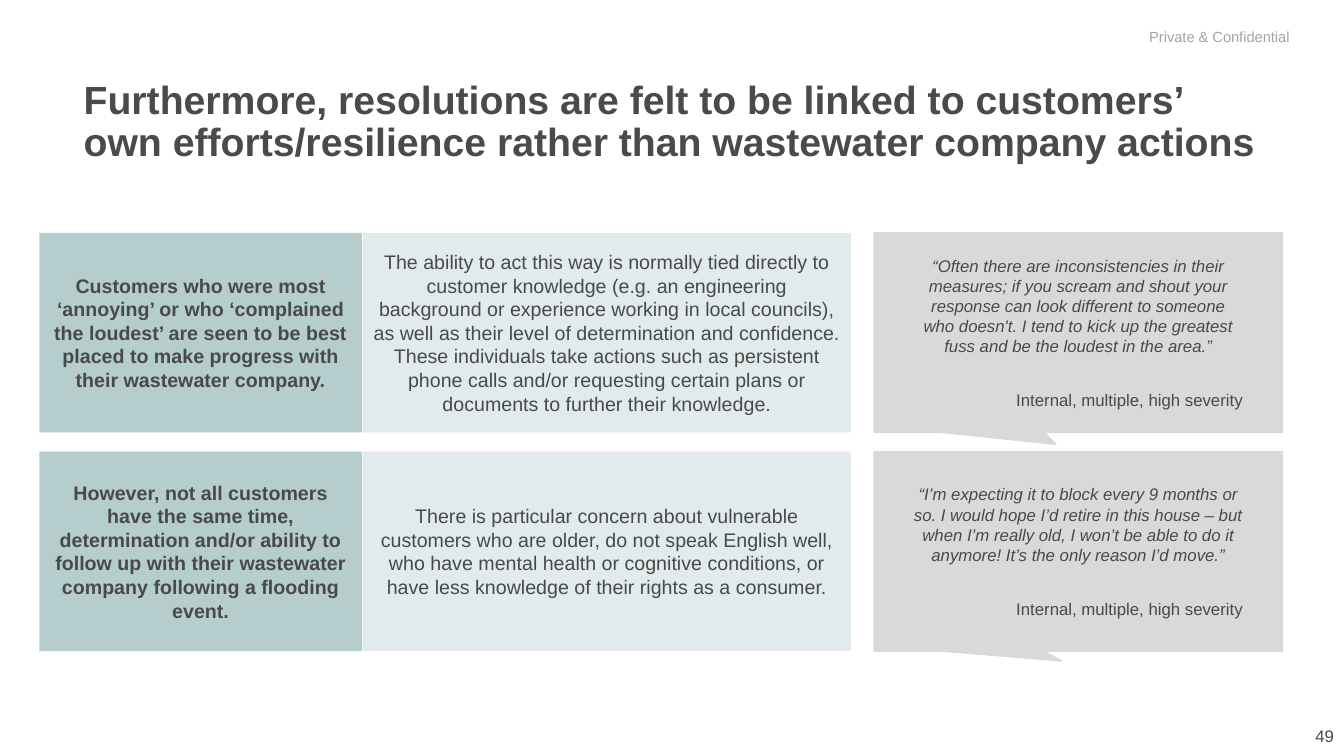
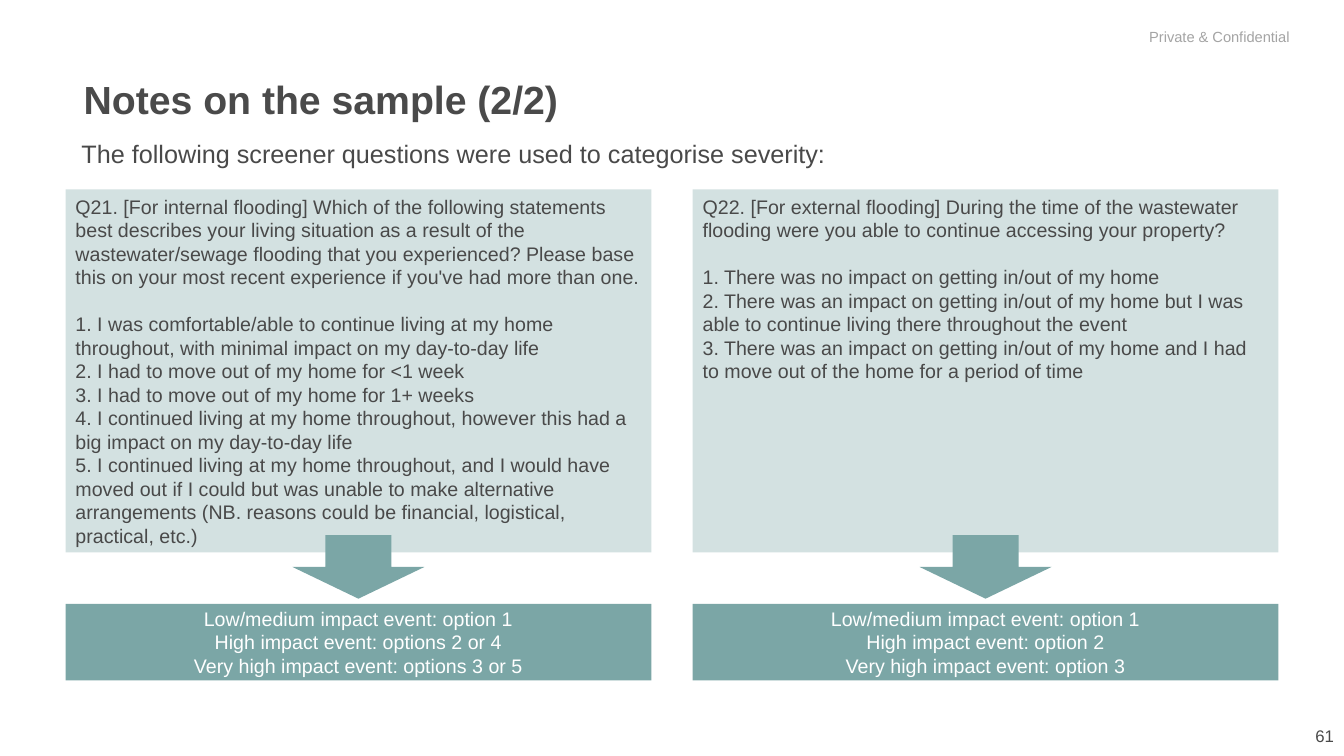
import pptx
import pptx.util
import pptx.dml.color
import pptx.enum.shapes
import pptx.enum.text

Inches = pptx.util.Inches
Pt = pptx.util.Pt
RGB = pptx.dml.color.RGBColor
KIND = pptx.enum.shapes.MSO_SHAPE
ALIGN = pptx.enum.text.PP_ALIGN
ANCHOR = pptx.enum.text.MSO_ANCHOR

INK = RGB(0x49, 0x49, 0x49)
HEAD = RGB(0x4A, 0x4A, 0x4A)
MUTED = RGB(0xA4, 0xA4, 0xA4)
WHITE = RGB(0xFF, 0xFF, 0xFF)
GREY = RGB(0xD9, 0xD9, 0xD9)
TEAL = RGB(0x7B, 0xA6, 0xA6)
SAGE = RGB(0xB5, 0xCD, 0xCD)
MIST = RGB(0xD3, 0xE1, 0xE1)
PALE = RGB(0xE1, 0xEB, 0xEB)

WIDE, HIGH = 13.33, 7.5

BODY = {"size": Pt(14), "name": "Arial", "color": INK}
LABEL = BODY | {"bold": True}
LIGHT = BODY | {"color": WHITE}
TITLE = {"size": Pt(28), "name": "Arial", "color": HEAD, "bold": True}
INTRO = BODY | {"size": Pt(18)}
SMALL = BODY | {"size": Pt(10.5), "color": MUTED}
PAGE = BODY | {"size": Pt(12), "color": HEAD}
NAME = BODY | {"size": Pt(12)}
QUOTE = NAME | {"italic": True}

# Themes grid: label, detail and quote columns as (left, width)
COLS = [(0.39, 3.2), (3.6, 4.84), (8.67, 4.05)]
ROW_TOP, ROW_HIGH, ROW_GAP = 2.31, 1.98, 0.19

# Screener grid: two equal columns
ASK_LEFT, ASK_WIDE, ASK_GAP = 0.65, 5.81, 0.41

THEMES = [
    ("Customers who were most ‘annoying’ or who ‘complained the loudest’ are "
     "seen to be best placed to make progress with their wastewater company.",
     "The ability to act this way is normally tied directly to customer "
     "knowledge (e.g. an engineering background or experience working in local "
     "councils), as well as their level of determination and confidence. These "
     "individuals take actions such as persistent phone calls and/or requesting "
     "certain plans or documents to further their knowledge.",
     "“Often there are inconsistencies in their measures; if you scream and "
     "shout your response can look different to someone who doesn't. I tend to "
     "kick up the greatest fuss and be the loudest in the area.”",
     (-0.055, 0.56)),
    ("However, not all customers have the same time, determination and/or "
     "ability to follow up with their wastewater company following a flooding "
     "event.",
     "There is particular concern about vulnerable customers who are older, do "
     "not speak English well, who have mental health or cognitive conditions, "
     "or have less knowledge of their rights as a consumer.",
     "“I’m expecting it to block every 9 months or so. I would hope I’d retire "
     "in this house – but when I’m really old, I won’t be able to do it "
     "anymore! It’s the only reason I’d move.”",
     (-0.041, 0.549)),
]

SCREENER = [
    (["Q21. [For internal flooding] Which of the following statements best "
      "describes your living situation as a result of the wastewater/sewage "
      "flooding that you experienced? Please base this on your most recent "
      "experience if you've had more than one.",
      "1. I was comfortable/able to continue living at my home throughout, "
      "with minimal impact on my day-to-day life",
      "2. I had to move out of my home for <1 week",
      "3. I had to move out of my home for 1+ weeks",
      "4. I continued living at my home throughout, however this had a big "
      "impact on my day-to-day life",
      "5. I continued living at my home throughout, and I would have moved out "
      "if I could but was unable to make alternative arrangements (NB. reasons "
      "could be financial, logistical, practical, etc.)"],
     ["Low/medium impact event: option 1",
      "High impact event: options 2 or 4",
      "Very high impact event: options 3 or 5"]),
    (["Q22. [For external flooding] During the time of the wastewater flooding "
      "were you able to continue accessing your property?",
      "1. There was no impact on getting in/out of my home",
      "2. There was an impact on getting in/out of my home but I was able to "
      "continue living there throughout the event",
      "3. There was an impact on getting in/out of my home and I had to move "
      "out of the home for a period of time"],
     ["Low/medium impact event: option 1",
      "High impact event: option 2",
      "Very high impact event: option 3"]),
]


def style(font, form):
    for key, value in form.items():
        if key == "color":
            font.color.rgb = value
        else:
            setattr(font, key, value)


def write(shape, lines, form, align=ALIGN.LEFT, anchor=ANCHOR.TOP):
    """Fill a shape with one paragraph per line and return the paragraphs."""
    frame = shape.text_frame
    frame.word_wrap = True
    frame.vertical_anchor = anchor
    frame.text = "\n".join(lines)
    for para in frame.paragraphs:
        para.alignment = align
        style(para.runs[0].font, form)
    return frame.paragraphs


def block(slide, box, fill, kind=KIND.RECTANGLE):
    shape = slide.shapes.add_shape(kind, *map(Inches, box))
    shape.shadow.inherit = False
    shape.fill.solid()
    shape.fill.fore_color.rgb = fill
    shape.line.fill.background()
    return shape


def note(slide, box, text, form, **place):
    shape = slide.shapes.add_textbox(*map(Inches, box))
    return shape, write(shape, [text], form, **place)[0]


def quote(slide, box, text, tail):
    """Add a speech callout whose tail points at the given shares."""
    shape = block(slide, box, GREY, KIND.RECTANGULAR_CALLOUT)
    shape.line.color.rgb = GREY
    shape.line.width = Pt(1)
    for place, share in enumerate(tail):
        shape.adjustments[place] = share
    for side in ("left", "top", "right", "bottom"):
        setattr(shape.text_frame, "margin_" + side, Inches(0.39))
    words, source = write(shape, [text, "Internal, multiple, high severity"],
                          QUOTE, ALIGN.CENTER, ANCHOR.MIDDLE)
    words.space_after = Pt(6)
    source.space_before = Pt(18)
    source.alignment = ALIGN.RIGHT
    style(source.runs[0].font, NAME | {"italic": False})


def start(deck, title, page):
    """Add a blank slide with the shared title, marking and page number."""
    slide = deck.slides.add_slide(deck.slide_layouts[6])
    note(slide, (WIDE - 3, HIGH - 0.4, 3, 0.4), str(page), PAGE,
         align=ALIGN.RIGHT, anchor=ANCHOR.MIDDLE)
    note(slide, (11.3, 0.19, 1.63, 0.35), "Private & Confidential", SMALL,
         anchor=ANCHOR.MIDDLE)
    shape, para = note(slide, (0.83, 0.75, 11.75, 0.87), title, TITLE)
    shape.text_frame.margin_left = 0
    para.line_spacing = 0.9
    return slide


def themes(deck):
    slide = start(deck, "Furthermore, resolutions are felt to be linked to "
                  "customers’ own efforts/resilience rather than wastewater "
                  "company actions", 49)
    for row, (label, detail, words, tail) in enumerate(THEMES):
        top = ROW_TOP + row * (ROW_HIGH + ROW_GAP)
        cells = [(left, top, wide, ROW_HIGH) for left, wide in COLS]
        for box, text, fill, form in zip(cells, (label, detail),
                                         (SAGE, PALE), (LABEL, BODY)):
            write(block(slide, box, fill), [text], form,
                  ALIGN.CENTER, ANCHOR.MIDDLE)
        quote(slide, cells[2], words, tail)


def sample(deck):
    slide = start(deck, "Notes on the sample (2/2)", 61)
    note(slide, (0.71, 1.32, 11.79, 0.4), "The following screener questions "
         "were used to categorise severity:", INTRO)
    for col, (asked, result) in enumerate(SCREENER):
        left = ASK_LEFT + col * (ASK_WIDE + ASK_GAP)
        paras = write(block(slide, (left, 1.88, ASK_WIDE, 3.6), MIST),
                      asked, BODY)
        paras[1].space_before = Pt(16.8)
        mid = left + ASK_WIDE / 2
        block(slide, (mid - 0.655, 5.31, 1.31, 0.63), TEAL, KIND.DOWN_ARROW)
        write(block(slide, (left, 5.99, ASK_WIDE, 0.76), TEAL), result,
              LIGHT, ALIGN.CENTER, ANCHOR.MIDDLE)


def main():
    deck = pptx.Presentation()
    deck.slide_width, deck.slide_height = Inches(WIDE), Inches(HIGH)
    themes(deck)
    sample(deck)
    deck.save("out.pptx")


if __name__ == "__main__":
    main()
